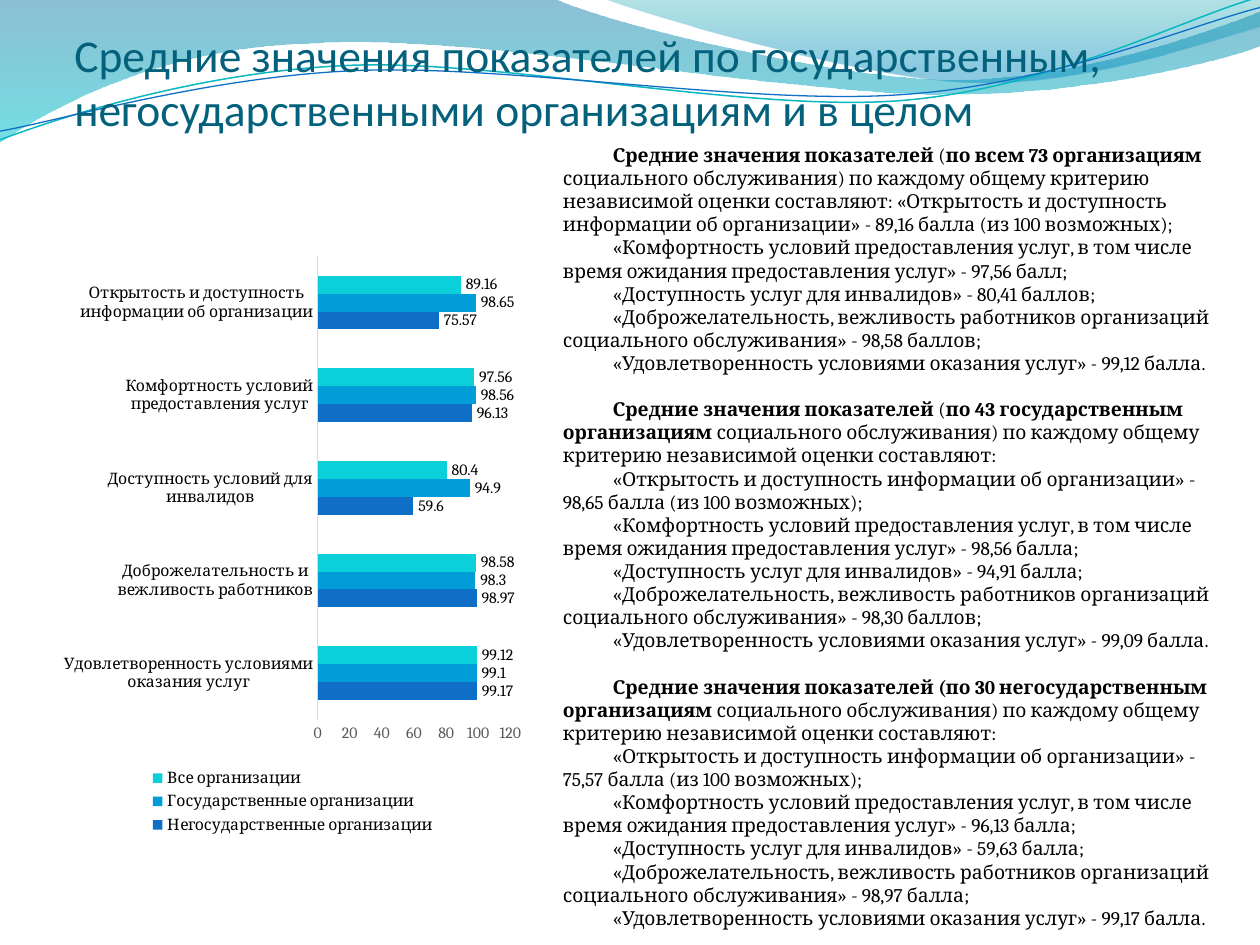
from lxml.etree import SubElement
from pptx import Presentation
from pptx.chart.data import CategoryChartData
from pptx.dml.color import RGBColor
from pptx.enum.chart import XL_CHART_TYPE, XL_LABEL_POSITION, XL_LEGEND_POSITION, XL_TICK_MARK
from pptx.enum.text import MSO_ANCHOR, MSO_AUTO_SIZE
from pptx.oxml.ns import qn
from pptx.util import Pt

TITLE = "Средние значения показателей по государственным, негосударственными организациям и в целом"
GROUPS = [
    [
        [("Средние значения показателей ", True), ("(", False), ("по всем 73 организациям ", True),
         ("социального обслуживания) по каждому общему критерию независимой оценки составляют: "
          "«Открытость и доступность информации об организации» - 89,16 балла (из 100 возможных);", False)],
        "«Комфортность условий предоставления услуг, в том числе время ожидания предоставления услуг» - 97,56 балл;",
        "«Доступность услуг для инвалидов» - 80,41 баллов;",
        "«Доброжелательность, вежливость работников организаций социального обслуживания» - 98,58 баллов;",
        "«Удовлетворенность условиями оказания услуг» - 99,12 балла.",
    ],
    [
        [("Средние значения показателей ", True), ("(", False), ("по 43 государственным организациям ", True),
         ("социального обслуживания) по каждому общему критерию независимой оценки составляют:", False)],
        "«Открытость и доступность информации об организации» - 98,65 балла (из 100 возможных);",
        "«Комфортность условий предоставления услуг, в том числе время ожидания предоставления услуг» - 98,56 балла;",
        "«Доступность услуг для инвалидов» - 94,91 балла;",
        "«Доброжелательность, вежливость работников организаций социального обслуживания» - 98,30 баллов;",
        "«Удовлетворенность условиями оказания услуг» - 99,09 балла.",
    ],
    [
        [("Средние значения показателей (по 30 негосударственным организациям ", True),
         ("социального обслуживания) по каждому общему критерию независимой оценки составляют:", False)],
        "«Открытость и доступность информации об организации» - 75,57 балла (из 100 возможных);",
        "«Комфортность условий предоставления услуг, в том числе время ожидания предоставления услуг» - 96,13 балла;",
        "«Доступность услуг для инвалидов» - 59,63 балла;",
        "«Доброжелательность, вежливость работников организаций социального обслуживания» - 98,97 балла;",
        "«Удовлетворенность условиями оказания услуг» - 99,17 балла.",
    ],
]
CATEGORIES = [
    "Удовлетворенность условиями оказания услуг",
    "Доброжелательность и вежливость работников",
    "Доступность условий для инвалидов",
    "Комфортность условий предоставления услуг",
    "Открытость и доступность информации об организации",
]
SERIES = [
    ("Негосударственные организации", "0F6FC6", [99.17, 98.97, 59.6, 96.13, 75.57]),
    ("Государственные организации", "009DD9", [99.1, 98.3, 94.9, 98.56, 98.65]),
    ("Все организации", "0BD0D9", [99.12, 98.58, 80.4, 97.56, 89.16]),
]
WAVES = [
    ([(0, 0), (316.8, -0.7), (342.7, 12.2, 478.1, 45.4, 545.8, 45.4), (614.2, 45.4, 689.8, 18.7, 720, 6.5),
      (720.7, 25.9), (707.8, 31.7, 626.4, 54.7, 537.1, 54), (447.8, 54, 275, 20.2, 185, 24.5),
      (92.9, 25.9, 33.1, 59.8, -0.7, 81.4)],
     [(0, "0074A1", 45), (1, "00C6CF", 55)]),
    ([(344.9, -0.7), (366.5, 7.9, 491, 44.6, 553.7, 46.8), (616.3, 49.7, 691.9, 23, 720, 15.1), (720, 0)],
     [(0, "00A1A9", 30), (0.8, "008BBF", 45)]),
]
STRANDS = [
    ([(0, 79.9), (34.6, 67, 113.8, 41, 199.4, 37.4), (284.4, 33.8, 427, 64.1, 513.4, 57.6),
      (599.8, 51.1, 675.4, 10.8, 718.6, -1.4)], "0AB8BF", 0.85),
    ([(0, 74.9), (33.8, 69.1, 118.1, 43.9, 203.8, 40.3), (290.2, 36.7, 429.8, 60.5, 516.2, 54),
      (601.9, 48.2, 677.5, 15.1, 720, 4.3)], "0F6FC6", 0.75),
]


def color(value):
    return RGBColor.from_string(value)


def style_font(font, name, size, value="000000"):
    font.name, font.size = name, Pt(size)
    font.color.rgb = color(value)


def add_outline(slide, steps, close):
    anchors = [(Pt(step[-2]), Pt(step[-1])) for step in steps]
    builder = slide.shapes.build_freeform(*anchors[0])
    builder.add_line_segments(anchors[1:], close=close)
    shape = builder.convert_to_shape()
    shape.shadow.inherit = False
    segments = list(shape.element.iter(qn("a:lnTo")))
    for segment, step in zip(segments, steps[1:]):
        if len(step) == 6:
            curve = segment.getparent().makeelement(qn("a:cubicBezTo"))
            for x, y in zip(step[::2], step[1::2]):
                SubElement(curve, qn("a:pt"), x=str(Pt(x) - shape.left), y=str(Pt(y) - shape.top))
            segment.getparent().replace(segment, curve)
    return shape


def add_wave(slide, steps, stops):
    shape = add_outline(slide, steps, True)
    shape.line.fill.background()
    shape.fill.gradient()
    shape.fill.gradient_angle = 270
    for stop, (position, value, _) in zip(shape.fill.gradient_stops, stops):
        stop.position = position
        stop.color.rgb = color(value)
    gradient = shape.element.spPr.find(qn("a:gradFill"))
    for element, (_, _, opacity) in zip(gradient.iter(qn("a:srgbClr")), stops):
        SubElement(element, qn("a:alpha"), val=str(opacity * 1000))


def add_strand(slide, steps, value, width):
    shape = add_outline(slide, steps, False)
    shape.fill.background()
    shape.line.color.rgb = color(value)
    shape.line.width = Pt(width)


def add_title(slide):
    frame = slide.shapes.add_textbox(Pt(42.5), Pt(41.75), Pt(648), Pt(36)).text_frame
    frame.word_wrap = True
    frame.vertical_anchor = MSO_ANCHOR.BOTTOM
    frame.margin_left = frame.margin_right = frame.margin_bottom = 0
    frame.text = TITLE
    style_font(frame.paragraphs[0].font, "Calibri", 26, "04617B")


def add_body(slide):
    frame = slide.shapes.add_textbox(Pt(314.6), Pt(78.3), Pt(385.2), Pt(473.8)).text_frame
    frame.word_wrap = True
    frame.auto_size = MSO_AUTO_SIZE.SHAPE_TO_FIT_TEXT
    paragraph = frame.paragraphs[0]
    for group_index, (heading, *results) in enumerate(GROUPS):
        for line_index, runs in enumerate([heading] + [[(result, False)] for result in results]):
            if group_index or line_index:
                paragraph = frame.add_paragraph()
            if group_index and not line_index:
                paragraph.space_before = Pt(13.2)
            paragraph._p.get_or_add_pPr().set("indent", str(Pt(28.35)))
            style_font(paragraph.font, "Cambria", 11)
            for text, bold in runs:
                run = paragraph.add_run()
                run.text, run.font.bold = text, bold


def add_scores_chart(slide):
    data = CategoryChartData()
    data.categories = CATEGORIES
    for name, _, values in SERIES:
        data.add_series(name, values)
    chart = slide.shapes.add_chart(
        XL_CHART_TYPE.BAR_CLUSTERED, Pt(31), Pt(139.7), Pt(272.2), Pt(339.8), data).chart
    chart.has_title = False
    style_font(chart.font, "Cambria", 10)
    chart.has_legend = True
    chart.legend.position = XL_LEGEND_POSITION.BOTTOM
    chart.legend.include_in_layout = False
    style_font(chart.legend.font, "Cambria", 9)

    for axis, value in ((chart.category_axis, "000000"), (chart.value_axis, "595959")):
        axis.major_tick_mark = axis.minor_tick_mark = XL_TICK_MARK.NONE
        axis.has_major_gridlines = False
        style_font(axis.tick_labels.font, "Cambria", 9, value)
    chart.category_axis.format.line.color.rgb = color("D9D9D9")
    chart.category_axis.format.line.width = Pt(0.75)
    chart.value_axis.format.line.fill.background()
    chart.value_axis.minimum_scale, chart.value_axis.maximum_scale = 0, 120
    chart.value_axis.major_unit = 20

    plot = chart.plots[0]
    plot.gap_width, plot.overlap, plot.vary_by_categories = 219, 0, False
    for series, (_, value, _) in zip(plot.series, SERIES):
        series.format.fill.solid()
        series.format.fill.fore_color.rgb = color(value)
        labels = series.data_labels
        labels.show_value = True
        labels.position = XL_LABEL_POSITION.OUTSIDE_END
        style_font(labels.font, "Cambria", 9)


def main():
    presentation = Presentation()
    presentation.slide_width, presentation.slide_height = Pt(720), Pt(540)
    slide = presentation.slides.add_slide(presentation.slide_layouts[6])
    for wave in WAVES:
        add_wave(slide, *wave)
    for strand in STRANDS:
        add_strand(slide, *strand)
    add_title(slide)
    add_body(slide)
    add_scores_chart(slide)
    presentation.save("out.pptx")


if __name__ == "__main__":
    main()
